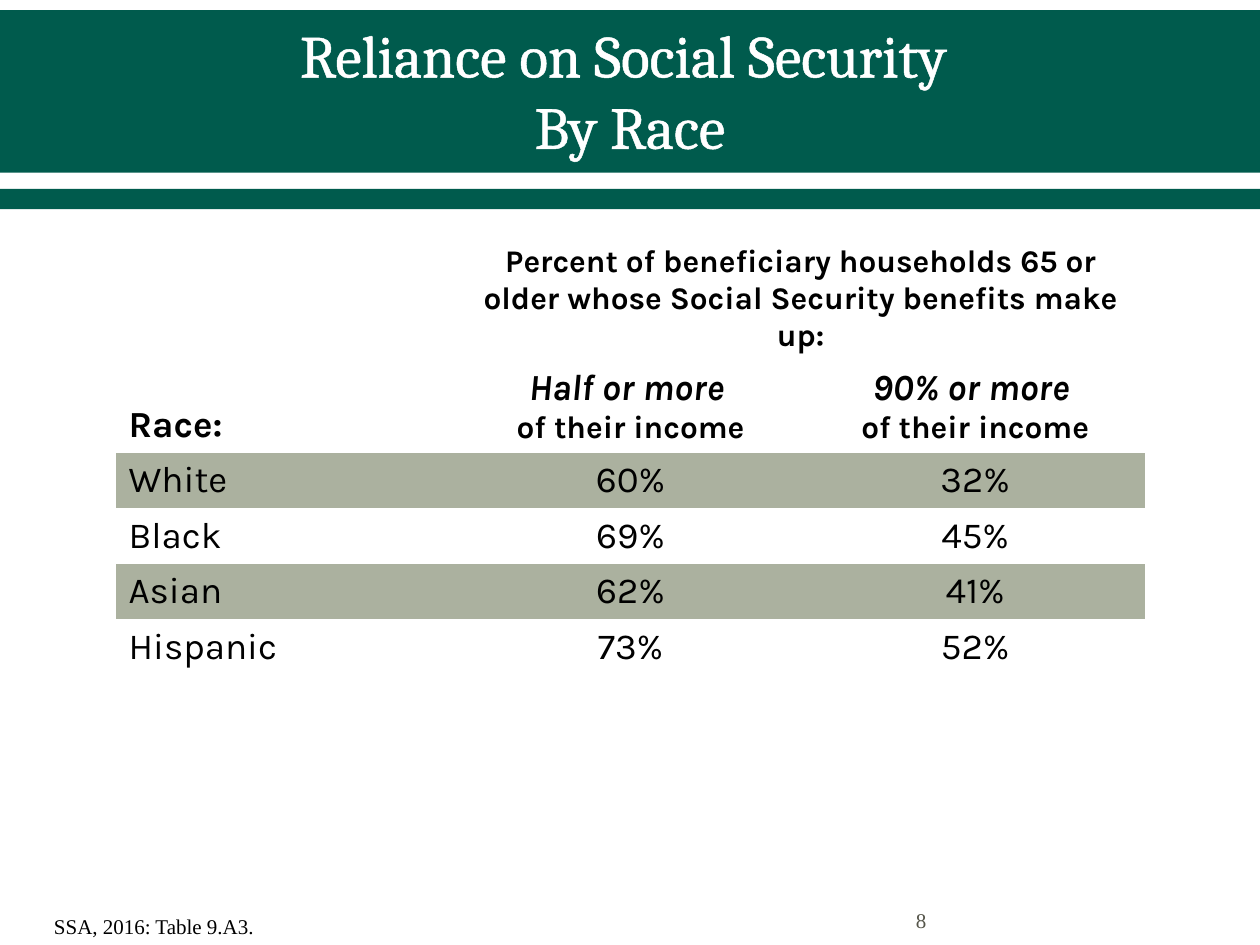
from lxml.etree import SubElement
from pptx import Presentation
from pptx.dml.color import RGBColor
from pptx.enum.shapes import MSO_SHAPE as Shape
from pptx.enum.text import MSO_ANCHOR as Anchor, MSO_AUTO_SIZE as AutoSize, PP_ALIGN as Align
from pptx.oxml.ns import qn
from pptx.util import Inches, Pt

COLORS = {"green": "005B4D", "sage": "ABB19F", "white": "FFFFFF", "black": "000000", "gray": "55554A"}
BANDS = [(0.08, 1.29), (1.5, 0.16)]
COLUMN_WIDTHS = [2.7, 2.77, 2.7]
ROW_HEIGHTS = [0.98, 0.73] + [0.44] * 4
NO_STYLE = "{2D5ABB26-0587-4C30-8999-92F81FD0307C}"
HEADING = "Percent of beneficiary households 65 or older whose Social Security benefits make up:"
SHARES = ["Half or more ", "90% or more "]
RACES = [
    ("White", "60%", "32%"),
    ("Black", "69%", "45%"),
    ("Asian", "62%", "41%"),
    ("Hispanic", "73%", "52%"),
]

LABEL = {"name": "Karla", "size": Pt(21), "bold": True, "italic": False}
SMALL_LABEL = {**LABEL, "size": Pt(18)}
SHARE_LABEL = {**LABEL, "italic": True}
DATA = {**LABEL, "bold": False}
FOOTER = {"name": "Times New Roman", "size": Pt(12)}
TITLE = {"name": "Cambria", "size": Pt(34)}


def rgb(color):
    return RGBColor.from_string(COLORS[color])


def apply_format(target, values):
    for attribute, value in values.items():
        setattr(target, attribute, value)


def write_line(paragraph, text, font_format, color="black", align=Align.LEFT):
    paragraph.text = text
    paragraph.alignment = align
    for run in paragraph.runs:
        apply_format(run.font, font_format)
        run.font.color.rgb = rgb(color)


def add_band(slide, top, height):
    band = slide.shapes.add_shape(Shape.RECTANGLE, 0, Inches(top), Inches(10), Inches(height))
    band.shadow.inherit = False
    band.fill.solid()
    band.fill.fore_color.rgb = rgb("green")
    band.line.fill.background()


def place_title(slide, text):
    title = slide.shapes.title
    apply_format(title, {"left": Inches(0.5), "top": Inches(0.17), "width": Inches(9), "height": Inches(1.08)})
    frame = title.text_frame
    apply_format(frame, {"word_wrap": True, "auto_size": AutoSize.NONE, "vertical_anchor": Anchor.MIDDLE})
    write_line(frame.paragraphs[0], text, TITLE, "white", Align.CENTER)
    for run in frame.paragraphs[0].runs:
        properties = run.font.fill._xPr
        outline = SubElement(properties, qn("a:ln"), w=str(Pt(1.1)))
        fill = SubElement(outline, qn("a:solidFill"))
        SubElement(fill, qn("a:srgbClr"), val=COLORS["white"])
        properties.insert(0, outline)
    title.element.getparent().append(title.element)


def fill_cell(cell, lines, align=Align.CENTER, anchor=Anchor.TOP):
    cell.vertical_anchor = anchor
    frame = cell.text_frame
    for index, (text, font_format) in enumerate(lines):
        paragraph = frame.add_paragraph() if index else frame.paragraphs[0]
        write_line(paragraph, text, font_format, align=align)


def add_race_table(slide):
    graphic = slide.shapes.add_table(
        len(ROW_HEIGHTS), len(COLUMN_WIDTHS), Inches(0.92), Inches(1.88),
        Inches(sum(COLUMN_WIDTHS)), Inches(sum(ROW_HEIGHTS)))
    table = graphic.table
    apply_format(table, {"first_row": False, "horz_banding": False})
    graphic.element.find(".//" + qn("a:tableStyleId")).text = NO_STYLE
    for column, width in zip(table.columns, COLUMN_WIDTHS):
        column.width = Inches(width)
    for row, height in zip(table.rows, ROW_HEIGHTS):
        row.height = Inches(height)

    heading = table.cell(0, 1)
    heading.merge(table.cell(0, 2))
    fill_cell(heading, [(HEADING, SMALL_LABEL)], anchor=Anchor.BOTTOM)
    fill_cell(table.cell(1, 0), [("Race:", LABEL)], Align.LEFT, Anchor.BOTTOM)
    for column, share in enumerate(SHARES, 1):
        fill_cell(table.cell(1, column), [(share, SHARE_LABEL), ("of their income", SMALL_LABEL)])

    for row, (race, *percents) in enumerate(RACES, 2):
        fill_cell(table.cell(row, 0), [(race, DATA)], Align.LEFT, Anchor.MIDDLE)
        for column, percent in enumerate(percents, 1):
            fill_cell(table.cell(row, column), [(percent, DATA)])

    for index, row in enumerate(table.rows):
        for cell in row.cells:
            if index >= 2 and index % 2 == 0:
                cell.fill.solid()
                cell.fill.fore_color.rgb = rgb("sage")
            else:
                cell.fill.background()


def add_footer(slide, text, bounds, color, frame_format):
    frame = slide.shapes.add_textbox(*map(Inches, bounds)).text_frame
    apply_format(frame, {"word_wrap": True, **frame_format})
    write_line(frame.paragraphs[0], text, FOOTER, color)


def main():
    """Build the slide on reliance on Social Security by race."""
    deck = Presentation()
    apply_format(deck, {"slide_width": Inches(10), "slide_height": Inches(7.5)})
    slide = deck.slides.add_slide(deck.slide_layouts[5])
    for top, height in BANDS:
        add_band(slide, top, height)
    place_title(slide, "Reliance on Social Security \vBy Race")
    add_race_table(slide)
    add_footer(slide, "8", (7.17, 7.1, 2.33, 0.4), "gray", {"vertical_anchor": Anchor.MIDDLE})
    add_footer(slide, "SSA, 2016: Table 9.A3.", (0.33, 7.2, 5.08, 0.3), "black",
               {"auto_size": AutoSize.SHAPE_TO_FIT_TEXT})
    deck.save("out.pptx")


if __name__ == "__main__":
    main()
